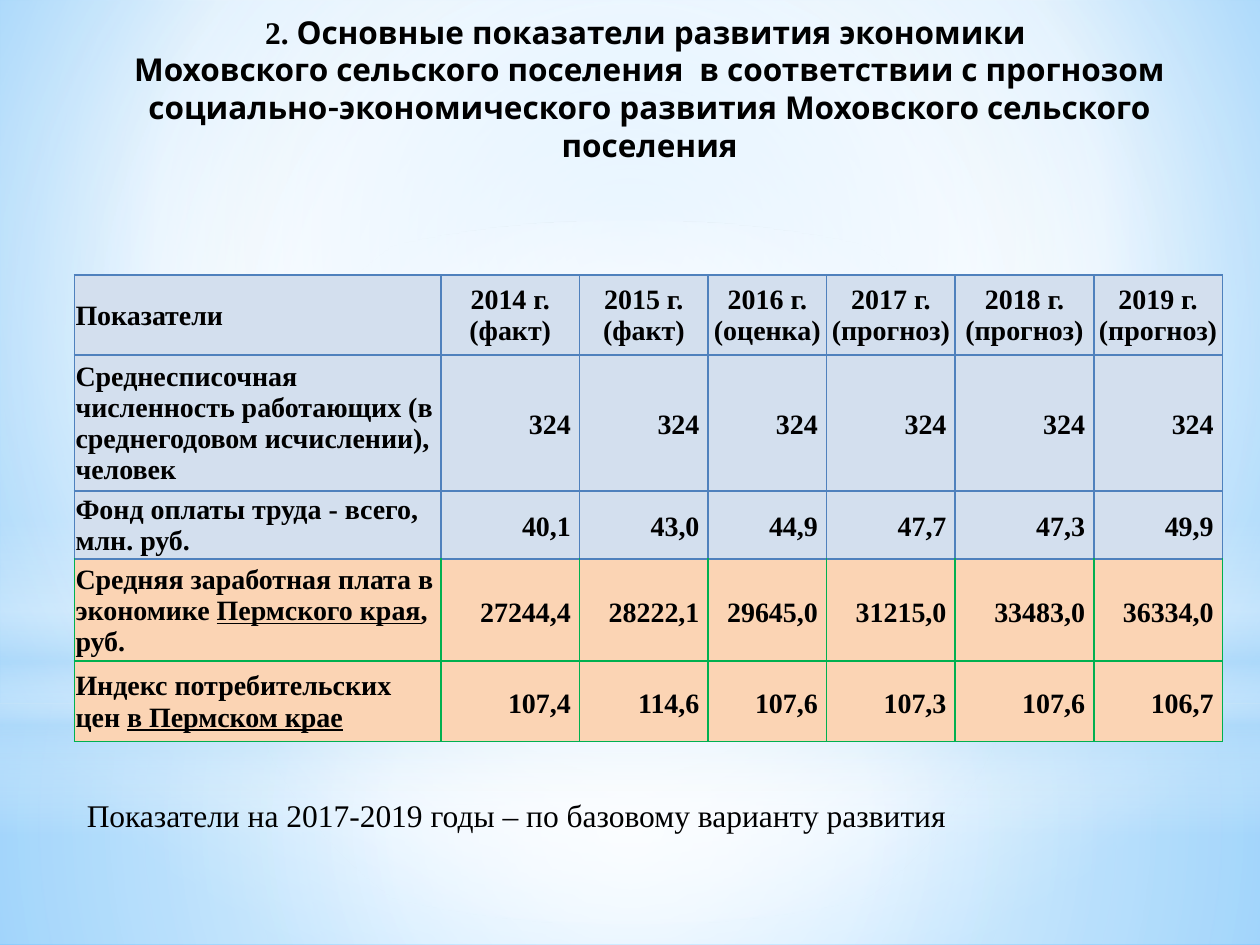
from dataclasses import dataclass

from lxml import etree
from pptx import Presentation
from pptx import util as u
from pptx.dml.color import RGBColor
from pptx.enum import shapes, text
from pptx.oxml import ns

BLACK = RGBColor(0x00, 0x00, 0x00)
WHITE = RGBColor(0xFF, 0xFF, 0xFF)
SKY = RGBColor(0x9E, 0xD5, 0xFF)
DEEP_SKY = RGBColor(0x5B, 0xB9, 0xFF)
HAZE = RGBColor(0xB4, 0xDC, 0xFA)
PALE_BLUE = RGBColor(0xD3, 0xDF, 0xEE)
PEACH = RGBColor(0xFB, 0xD4, 0xB4)
BLUE = RGBColor(0x4F, 0x81, 0xBD)
GREEN = RGBColor(0x00, 0xB0, 0x50)
SERIF = "Times New Roman"
SANS = "Karla"


@dataclass
class Gradient:
    """Stops are (position %, colour, opacity %); no focus means top to bottom."""
    stops: list[tuple[int, RGBColor, int]]
    focus: tuple[int, int, int, int] | None = (50, 50, 50, 50)


@dataclass
class Glow:
    kind: shapes.MSO_SHAPE
    top: float
    height: float
    gradient: Gradient


@dataclass
class Indicator:
    label: str
    values: list[str]
    height: float
    fill: RGBColor = PALE_BLUE
    border: RGBColor = BLUE
    top_border: RGBColor = BLUE
    underlined: str = ""
    label_end: str = ""


BACKDROP = Gradient([(0, SKY, 100), (60, WHITE, 100), (100, DEEP_SKY, 100)],
                    (20, 10, 20, 60))
RECTANGLE, OVAL = shapes.MSO_SHAPE.RECTANGLE, shapes.MSO_SHAPE.OVAL
GLOWS = [
    Glow(RECTANGLE, 402, 138, Gradient([(0, WHITE, 91), (37, WHITE, 76), (100, HAZE, 79)])),
    Glow(RECTANGLE, 0, 402, Gradient([(0, WHITE, 89), (48, WHITE, 62), (100, HAZE, 79)])),
    Glow(RECTANGLE, 297, 180, Gradient(
        [(0, WHITE, 0), (29, WHITE, 30), (45, HAZE, 40),
         (55, WHITE, 26), (65, HAZE, 60), (100, WHITE, 0)], None)),
    Glow(OVAL, 126, 402, Gradient([(0, WHITE, 100), (56, WHITE, 0)])),
]

COLUMN_WIDTHS = [209.5, 79.2, 73.5, 67.7, 73.5, 79.2, 73.5]
HEADINGS = ["2014 г. (факт)", "2015 г. (факт)", "2016 г. (оценка)",
            "2017 г. (прогноз)", "2018 г. (прогноз)", "2019 г. (прогноз)"]
INDICATORS = [
    Indicator("Показатели", HEADINGS, 46),
    Indicator("Среднесписочная численность работающих (в среднегодовом исчислении), человек",
              ["324"] * len(HEADINGS), 77),
    Indicator("Фонд оплаты труда - всего, млн. руб.",
              ["40,1", "43,0", "44,9", "47,7", "47,3", "49,9"], 39),
    Indicator("Средняя заработная плата в экономике ",
              ["27244,4", "28222,1", "29645,0", "31215,0", "33483,0", "36334,0"], 58,
              PEACH, GREEN, BLUE, "Пермского края", ", руб."),
    Indicator("Индекс потребительских цен ",
              ["107,4", "114,6", "107,6", "107,3", "107,6", "106,7"], 46,
              PEACH, GREEN, GREEN, "в Пермском крае"),
]


def add_element(parent, tag: str, **attributes):
    return etree.SubElement(parent, ns.qn(tag),
                            {name: str(value) for name, value in attributes.items()})


def set_gradient(properties, gradient: Gradient) -> None:
    """Replace the solid fill in a properties element by a gradient."""
    fill = etree.Element(ns.qn("a:gradFill"), rotWithShape="1")
    stop_list = add_element(fill, "a:gsLst")
    for position, color, opacity in gradient.stops:
        stop = add_element(stop_list, "a:gs", pos=position * 1000)
        color_element = add_element(stop, "a:srgbClr", val=color)
        if opacity < 100:
            add_element(color_element, "a:alpha", val=opacity * 1000)
    if gradient.focus:
        circle = add_element(fill, "a:path", path="circle")
        edges = {side: inset * 1000 for side, inset in zip("ltrb", gradient.focus)}
        add_element(circle, "a:fillToRect", **edges)
    else:
        add_element(fill, "a:lin", ang=5400000, scaled=0)
    properties.replace(properties.find(ns.qn("a:solidFill")), fill)


def add_glow(slide, glow: Glow) -> None:
    shape = slide.shapes.add_shape(glow.kind, 0, u.Pt(glow.top), u.Pt(720), u.Pt(glow.height))
    shape.shadow.inherit = False
    shape.line.fill.background()
    shape.fill.solid()
    set_gradient(shape.element.spPr, glow.gradient)


def set_font(font, size: float, bold: bool, name: str = SERIF) -> None:
    font.name, font.size, font.bold = name, u.Pt(size), bold
    font.color.rgb = BLACK


def set_borders(cell, color: RGBColor, top_color: RGBColor) -> None:
    properties = cell._tc.get_or_add_tcPr()
    for index, side in enumerate("LRTB"):
        line = etree.Element(ns.qn(f"a:ln{side}"), w=str(u.Pt(1)))
        fill = add_element(line, "a:solidFill")
        add_element(fill, "a:srgbClr", val=top_color if side == "T" else color)
        properties.insert(index, line)


def style_cell(cell, row: Indicator, side_margin: float, top_margin: float) -> None:
    cell.fill.solid()
    cell.fill.fore_color.rgb = row.fill
    set_borders(cell, row.border, row.top_border)
    cell.vertical_anchor = text.MSO_ANCHOR.MIDDLE
    cell.margin_left = cell.margin_right = u.Pt(side_margin)
    cell.margin_top, cell.margin_bottom = u.Pt(top_margin), 0
    set_font(cell.text_frame.paragraphs[0].font, 16, True)


def add_indicator_table(slide) -> None:
    table = slide.shapes.add_table(
        len(INDICATORS), len(COLUMN_WIDTHS), u.Pt(42.5), u.Pt(157),
        u.Pt(sum(COLUMN_WIDTHS)), u.Pt(sum(row.height for row in INDICATORS))).table
    table.first_row = table.horz_banding = False
    for column, width in zip(table.columns, COLUMN_WIDTHS):
        column.width = u.Pt(width)
    for row_index, row in enumerate(INDICATORS):
        table.rows[row_index].height = u.Pt(row.height)
        is_heading = row_index == 0

        # Row label, partly underlined
        cell = table.cell(row_index, 0)
        paragraph = cell.text_frame.paragraphs[0]
        for part in filter(None, (row.label, row.underlined, row.label_end)):
            run = paragraph.add_run()
            run.text = part
            if part == row.underlined:
                run.font.underline = True
        style_cell(cell, row, 0.7, 0.7)

        # Year headings or values
        for column_index, value in enumerate(row.values, start=1):
            cell = table.cell(row_index, column_index)
            cell.text = value
            paragraph = cell.text_frame.paragraphs[0]
            if is_heading:
                paragraph.alignment = text.PP_ALIGN.CENTER
                style_cell(cell, row, 0.7, 0.7)
            else:
                paragraph.alignment = text.PP_ALIGN.RIGHT
                paragraph.line_spacing = 1.15
                style_cell(cell, row, 5, 0)


def add_title(slide) -> None:
    frame = slide.shapes.add_textbox(u.Pt(48), u.Pt(3.6), u.Pt(646.5), u.Pt(72.7)).text_frame
    frame.word_wrap = True
    lines = [
        [("2. ", SERIF), ("Основные показатели развития экономики ", SANS)],
        [("Моховского сельского поселения  в соответствии с прогнозом "
          "социально-экономического развития Моховского сельского поселения", SANS)],
    ]
    for index, parts in enumerate(lines):
        paragraph = frame.add_paragraph() if index else frame.paragraphs[0]
        paragraph.alignment = text.PP_ALIGN.CENTER
        for words, font_name in parts:
            run = paragraph.add_run()
            run.text = words
            set_font(run.font, 18, True, font_name)


def add_note(slide) -> None:
    frame = slide.shapes.add_textbox(u.Pt(42.5), u.Pt(451.5), u.Pt(510.5), u.Pt(29)).text_frame
    frame.word_wrap = False
    frame.text = "Показатели на 2017-2019 годы – по базовому варианту развития"
    set_font(frame.paragraphs[0].font, 18, False)


def main() -> None:
    presentation = Presentation()
    presentation.slide_width, presentation.slide_height = u.Pt(720), u.Pt(540)
    slide = presentation.slides.add_slide(presentation.slide_layouts[6])

    # Background and soft light
    slide.background.fill.solid()
    set_gradient(slide.element.xpath(".//p:bgPr")[0], BACKDROP)
    for glow in GLOWS:
        add_glow(slide, glow)

    # Content
    add_title(slide)
    add_note(slide)
    add_indicator_table(slide)
    presentation.save("out.pptx")


if __name__ == "__main__":
    main()
